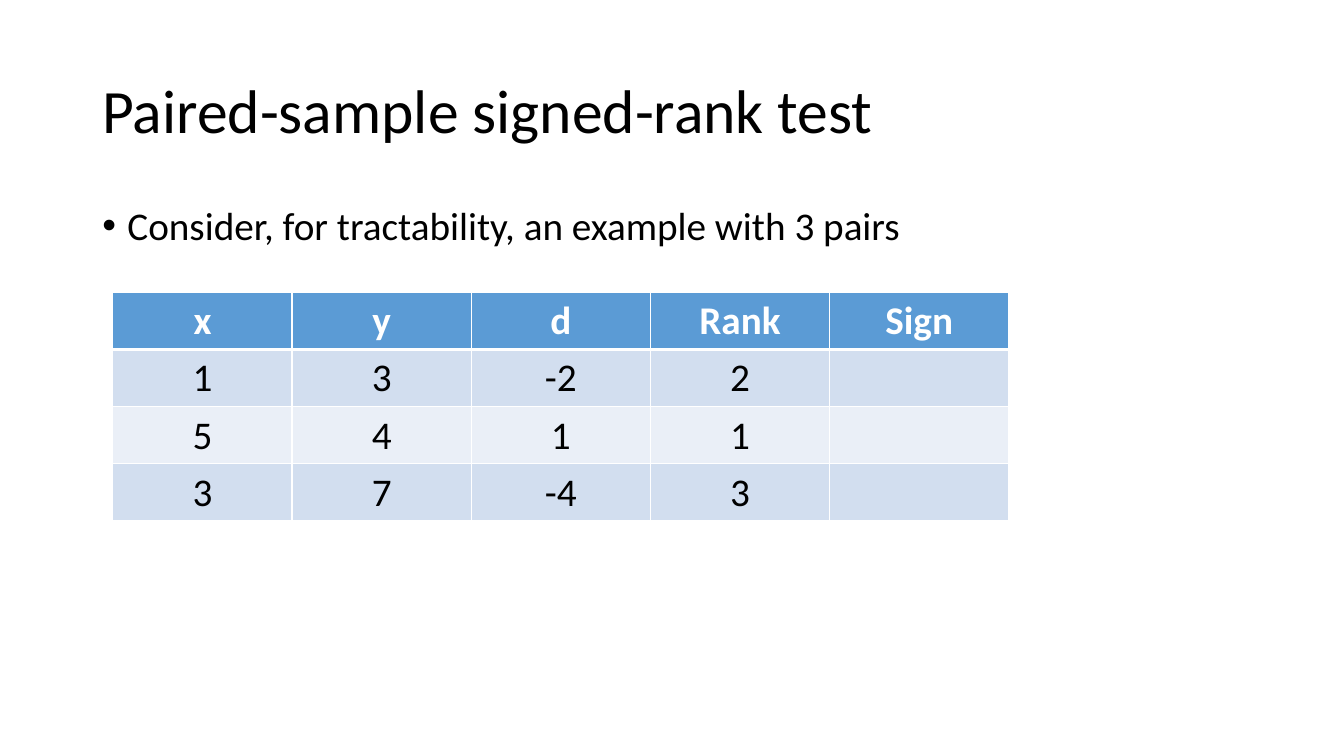
from lxml.etree import SubElement
from pptx import Presentation
from pptx.dml.color import RGBColor
from pptx.enum.text import MSO_ANCHOR as Anchor, PP_ALIGN as Align
from pptx.oxml.ns import qn
from pptx.util import Pt

TITLE = "Paired-sample signed-rank test"
BULLET = "Consider, for tractability, an example with 3 pairs"
PAIRS = [
    ("x", "y", "d", "Rank", "Sign"),
    ("1", "3", "-2", "2", ""),
    ("5", "4", "1", "1", ""),
    ("3", "7", "-4", "3", ""),
]
COLOURS = {
    "text": "000000",
    "white": "FFFFFF",
    "header": "5B9BD5",
    "odd": "D2DEEF",
    "even": "EAEFF7",
}
FONT = "Calibri"
MARGIN, TEXT_WIDTH = 66, 828
TABLE_LEFT, TABLE_TOP = 80.64, 208.8
COLUMN_WIDTH, ROW_HEIGHT = 128, 40.86
THIN, THICK = 1, 3


def write(frame, text, size=28, colour="text", bold=False, align=Align.LEFT,
          anchor=Anchor.TOP, spacing=None, before=None):
    """Put one formatted paragraph in a text frame and return it."""
    frame.word_wrap = True
    frame.vertical_anchor = anchor
    paragraph = frame.paragraphs[0]
    paragraph.alignment = align
    paragraph.line_spacing = spacing
    paragraph.space_before = before
    run = paragraph.add_run()
    run.text = text
    run.font.name, run.font.size, run.font.bold = FONT, Pt(size), bold
    run.font.color.rgb = RGBColor.from_string(COLOURS[colour])
    return paragraph


def add_bullet(paragraph, indent):
    """Give a paragraph a hanging bullet."""
    properties = paragraph._p.get_or_add_pPr()
    properties.set("marL", str(Pt(indent)))
    properties.set("indent", str(Pt(-indent)))
    SubElement(properties, qn("a:buFont"), typeface="Arial")
    SubElement(properties, qn("a:buChar"), char="•")


def add_borders(cell, top, bottom):
    """Draw white lines on the four sides of a cell."""
    properties = cell._tc.get_or_add_tcPr()
    sides = {"lnL": THIN, "lnR": THIN, "lnT": top, "lnB": bottom}
    for side, width in sides.items():
        line = SubElement(properties, qn(f"a:{side}"), w=str(Pt(width)))
        fill = SubElement(line, qn("a:solidFill"))
        SubElement(fill, qn("a:srgbClr"), val=COLOURS["white"])


def add_pairs(slide):
    """Build the table of pairs with a header and banded rows."""
    rows, columns = len(PAIRS), len(PAIRS[0])
    table = slide.shapes.add_table(
        rows, columns, Pt(TABLE_LEFT), Pt(TABLE_TOP),
        Pt(columns * COLUMN_WIDTH), Pt(rows * ROW_HEIGHT)).table
    for r, values in enumerate(PAIRS):
        header = r == 0
        band = "header" if header else ("even", "odd")[r % 2]
        for c, value in enumerate(values):
            cell = table.cell(r, c)
            add_borders(cell, THICK if r == 1 else THIN, THICK if header else THIN)
            cell.fill.solid()
            cell.fill.fore_color.rgb = RGBColor.from_string(COLOURS[band])
            if value:
                write(cell.text_frame, value, bold=header, align=Align.CENTER,
                      colour="white" if header else "text")


def main():
    """Build the slide and save it."""
    deck = Presentation()
    deck.slide_width, deck.slide_height = Pt(960), Pt(540)
    slide = deck.slides.add_slide(deck.slide_layouts[6])
    title = slide.shapes.add_textbox(Pt(MARGIN), Pt(28.8), Pt(TEXT_WIDTH), Pt(104.4))
    write(title.text_frame, TITLE, size=44, anchor=Anchor.MIDDLE, spacing=0.9)
    body = slide.shapes.add_textbox(Pt(MARGIN), Pt(144), Pt(TEXT_WIDTH), Pt(342.6))
    add_bullet(write(body.text_frame, BULLET, spacing=0.9, before=Pt(10)), indent=18)
    add_pairs(slide)
    deck.save("out.pptx")


if __name__ == "__main__":
    main()
